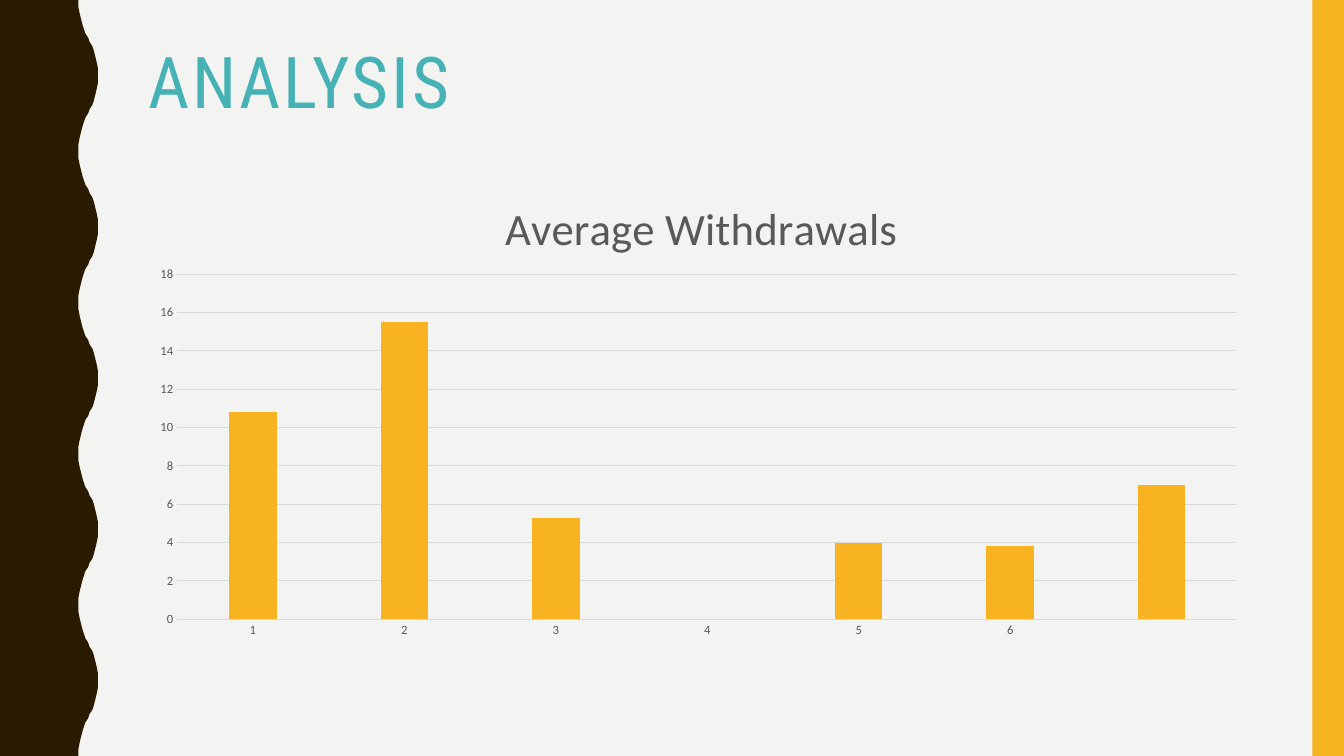
from pptx import Presentation
from pptx.chart.data import CategoryChartData as ChartData
from pptx.dml.color import RGBColor
from pptx.enum.chart import XL_CHART_TYPE as Kind, XL_TICK_MARK as Tick
from pptx.enum.shapes import MSO_SHAPE as Preset
from pptx.enum.text import MSO_ANCHOR as Anchor, PP_ALIGN as Align
from pptx.oxml import parse_xml
from pptx.oxml.ns import nsdecls, qn
from pptx.util import Pt

TITLE = "ANALYSIS"
CHART_TITLE = "Average Withdrawals"
AVERAGES = [("1", 10.8), ("2", 15.5), ("3", 5.3), ("4", None),
            ("5", 4), ("6", 3.8), ("", 7)]

PAPER, BROWN, AMBER, TEAL = "F3F3F2", "2A1A00", "F8B323", "46B2B5"
GRAY, RULE = "595959", "D9D9D9"
WIDE, HIGH = 960, 540
LEFT, SPAN = 98.6, 801.4
WAVES = 5
# Half a wave, from trough to crest
CURVE = [(56, 0), (56.2, 5), (57, 10), (57.7, 14.4), (58.6, 18),
         (59.8, 21), (61.2, 24), (62.6, 27), (64.1, 30), (65.5, 33),
         (67, 36), (68.1, 39.6), (69, 44), (69.7, 49), (70, 54)]


def color(code):
    return RGBColor.from_string(code)


def paint(shape, code):
    shape.shadow.inherit = False
    shape.fill.solid()
    shape.fill.fore_color.rgb = color(code)
    shape.line.fill.background()


def style(font, size, code, name="Calibri"):
    font.name, font.size, font.bold = name, Pt(size), False
    font.color.rgb = color(code)


def rule(line):
    line.color.rgb = color(RULE)
    line.width = Pt(0.75)


def place(node, index, **parts):
    """Give a chart part a manual layout in fractions of the chart."""
    for old in node.findall(qn("c:layout")):
        node.remove(old)
    inner = '<c:layoutTarget val="inner"/>' if "w" in parts else ""
    modes = "".join(f'<c:{key}Mode val="edge"/>' for key in "xy")
    sizes = "".join(f'<c:{key} val="{val}"/>' for key, val in parts.items())
    node.insert(index, parse_xml(
        f'<c:layout {nsdecls("c")}><c:manualLayout>{inner}{modes}{sizes}'
        '</c:manualLayout></c:layout>'))


def add_wave(slide):
    step = HIGH / WAVES
    wave = CURVE + [(x, step - y) for x, y in CURVE[-2::-1]]
    edge = [(x, y + n * step) for n in range(WAVES) for x, y in wave]
    form = slide.shapes.build_freeform(0, 0, scale=Pt(1))
    form.add_line_segments(edge + [(0, HIGH)], close=True)
    paint(form.convert_to_shape(), BROWN)


def add_title(slide):
    title = slide.shapes.title
    title.left, title.top = Pt(LEFT), Pt(30.2)
    title.width, title.height = Pt(SPAN), Pt(117.4)
    frame = title.text_frame
    frame.text = TITLE
    frame.vertical_anchor = Anchor.TOP
    para = frame.paragraphs[0]
    para.alignment, para.line_spacing = Align.LEFT, 0.9
    style(para.font, 51, TEAL, "Roboto Condensed")
    para.runs[0].font._element.set("spc", "200")


def add_bars(slide):
    data = ChartData()
    data.categories = [label for label, _ in AVERAGES]
    data.add_series("Series 1", [value for _, value in AVERAGES])
    chart = slide.shapes.add_chart(
        Kind.COLUMN_CLUSTERED, Pt(LEFT), Pt(113.8), Pt(SPAN), Pt(349.2),
        data).chart
    chart.has_legend = False
    chart.font.name, chart.font.size = "Calibri", Pt(10)

    chart.has_title = True
    head = chart.chart_title
    head.text_frame.text = CHART_TITLE
    style(head.text_frame.paragraphs[0].font, 32, GRAY)
    place(head._element, 1, x=0.32, y=0.06)
    area = chart._chartSpace.find(".//" + qn("c:plotArea"))
    place(area, 0, x=0.035, y=0.235, w=0.945, h=0.706)

    plot = chart.plots[0]
    plot.gap_width, plot.overlap, plot.vary_by_categories = 219, -27, False
    fill = plot.series[0].format.fill
    fill.solid()
    fill.fore_color.rgb = color(AMBER)

    cats, vals = chart.category_axis, chart.value_axis
    for axis in (cats, vals):
        axis.major_tick_mark = axis.minor_tick_mark = Tick.NONE
        style(axis.tick_labels.font, 9, GRAY)
    rule(cats.format.line)
    vals.format.line.fill.background()
    vals.has_major_gridlines = True
    rule(vals.major_gridlines.format.line)
    vals.minimum_scale, vals.maximum_scale, vals.major_unit = 0, 18, 2


def main():
    deck = Presentation()
    deck.slide_width, deck.slide_height = Pt(WIDE), Pt(HIGH)
    slide = deck.slides.add_slide(deck.slide_layouts[5])
    back = slide.background.fill
    back.solid()
    back.fore_color.rgb = color(PAPER)
    add_wave(slide)
    band = slide.shapes.add_shape(
        Preset.RECTANGLE, Pt(937.5), 0, Pt(22.5), Pt(HIGH))
    paint(band, AMBER)
    add_title(slide)
    add_bars(slide)
    deck.save("out.pptx")


if __name__ == "__main__":
    main()
